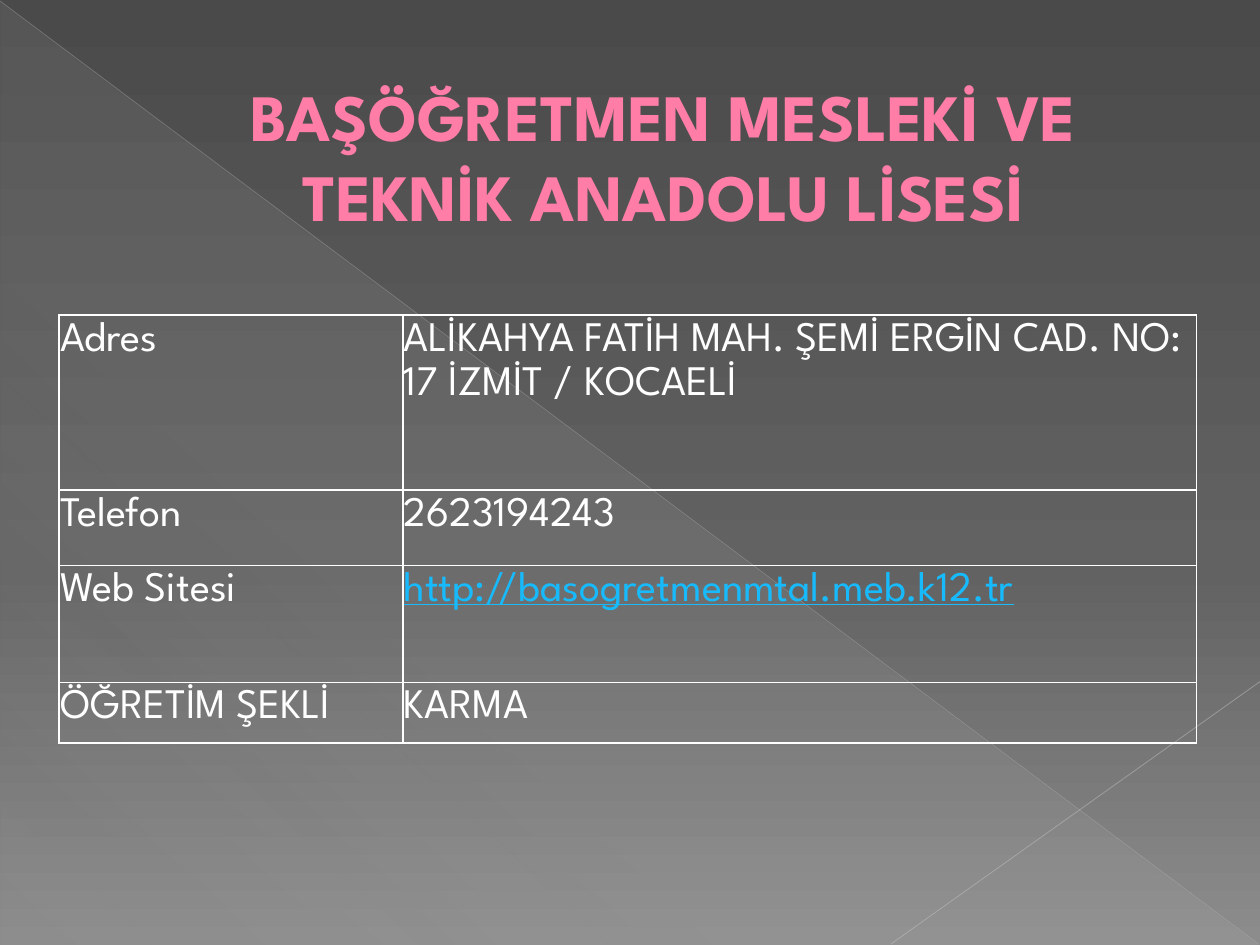
from lxml.etree import SubElement
from pptx import Presentation
from pptx.dml.color import RGBColor
from pptx.enum.shapes import MSO_CONNECTOR as Connector, MSO_SHAPE as Shape
from pptx.enum.text import MSO_ANCHOR as Anchor, PP_ALIGN as Align
from pptx.oxml.ns import qn
from pptx.util import Cm, Pt

FONT = "League Spartan"
COLORS = {
    "top": "4A4A4A", "middle": "626262", "bottom": "8C8C8C",
    "veil": "D2D2D2", "diagonal": "BFBFBF", "corner": "C6C6C6",
    "title": "FF7DA7", "title outline": "B12761",
    "text": "FFFFFF", "web": "17BBFD",
}


class SlideBuilder:
    def __init__(self, slide, font, colors):
        self.slide, self.font, self.colors = slide, font, colors

    def rgb(self, color):
        return RGBColor.from_string(self.colors[color])

    def add_color(self, parent, color, opacity=100):
        element = SubElement(parent, qn("a:srgbClr"), val=self.colors[color])
        if opacity < 100:
            SubElement(element, qn("a:alpha"), val=str(opacity * 1000))

    def set_gradient(self, owner, fill, stops, angle):
        fill.gradient()
        gradient = owner.element.xpath(".//a:gradFill")[0]
        for child in list(gradient):
            gradient.remove(child)
        stop_list = SubElement(gradient, qn("a:gsLst"))
        for position, color, opacity in stops:
            stop = SubElement(stop_list, qn("a:gs"), pos=str(position * 1000))
            self.add_color(stop, color, opacity)
        SubElement(gradient, qn("a:lin"), ang=str(angle * 60000), scaled="0")

    def background(self, stops, angle):
        self.set_gradient(self.slide, self.slide.background.fill, stops, angle)

    def triangle(self, left, top, width, height, stops, angle):
        shape = self.slide.shapes.add_shape(
            Shape.RIGHT_TRIANGLE, Cm(left), Cm(top), Cm(width), Cm(height))
        shape.shadow.inherit = False
        shape.line.fill.background()
        self.set_gradient(shape, shape.fill, stops, angle)

    def line(self, start, end, color, width, opacity):
        connector = self.slide.shapes.add_connector(
            Connector.STRAIGHT, *map(Cm, start + end))
        connector.line.width = Pt(width)
        connector.line.color.rgb = self.rgb(color)
        color_element = connector.element.xpath(".//a:ln//a:srgbClr")[0]
        SubElement(color_element, qn("a:alpha"), val=str(opacity * 1000))
        properties = connector.element.xpath("./p:spPr")[0]
        SubElement(properties, qn("a:effectLst"))

    def style(self, paragraph, size, color, bold=False, underline=False):
        font = paragraph.font
        font.name, font.size = self.font, Pt(size)
        font.bold, font.underline = bold, underline
        font.color.rgb = self.rgb(color)

    def title(self, text, left, top, width, height, indent):
        box = self.slide.shapes.add_textbox(
            Cm(left), Cm(top), Cm(width), Cm(height))
        frame = box.text_frame
        frame.word_wrap = True
        frame.vertical_anchor = Anchor.TOP
        frame.margin_top = 0
        frame.margin_left = Cm(indent)
        paragraph = frame.paragraphs[0]
        paragraph.alignment = Align.CENTER
        paragraph.line_spacing = Pt(45.7)
        run = paragraph.add_run()
        run.text = text
        self.style(run, 37.8, "title", bold=True)
        # Thin outline around the letters, placed ahead of their fill
        properties = run.font.fill and box.element.xpath(".//a:rPr")[0]
        outline = SubElement(properties, qn("a:ln"), w=str(Pt(0.5)))
        self.add_color(SubElement(outline, qn("a:solidFill")), "title outline")
        properties.insert(0, outline)

    def cell(self, cell, text, color, space_after):
        cell.margin_left = cell.margin_right = Cm(0.02)
        cell.margin_top = cell.margin_bottom = Cm(0.02)
        cell.text = text
        paragraph = cell.text_frame.paragraphs[0]
        paragraph.line_spacing = 1.15
        paragraph.space_after = Pt(space_after)
        self.style(paragraph, 24, color, underline=color == "web")
        properties = cell.fill and cell._tc.get_or_add_tcPr()
        for side in ("a:lnL", "a:lnR", "a:lnT", "a:lnB"):
            border = SubElement(properties, qn(side), w=str(Pt(1)))
            self.add_color(SubElement(border, qn("a:solidFill")), "text")
        cell.fill.background()

    def table(self, left, top, widths, rows):
        heights = [row[0] for row in rows]
        table = self.slide.shapes.add_table(
            len(rows), len(widths), Cm(left), Cm(top),
            Cm(sum(widths)), Cm(sum(heights))).table
        table.first_row = table.horz_banding = False
        for column, width in zip(table.columns, widths):
            column.width = Cm(width)
        for index, (height, label, value, color, space_after) in enumerate(rows):
            table.rows[index].height = Cm(height)
            self.cell(table.cell(index, 0), label, "text", space_after)
            self.cell(table.cell(index, 1), value, color, space_after)


def main():
    presentation = Presentation()
    presentation.slide_width, presentation.slide_height = Cm(25.4), Cm(19.05)
    slide = presentation.slides.add_slide(presentation.slide_layouts[6])
    builder = SlideBuilder(slide, FONT, COLORS)

    # Backdrop
    builder.background(
        [(0, "top", 100), (60, "middle", 100), (100, "bottom", 100)], 90)
    builder.triangle(0.02, 0.04, 25.36, 19.01,
                     [(0, "veil", 10), (70, "veil", 8), (100, "veil", 1)], 133)
    builder.line((0, 0.02), (25.37, 19.03), "diagonal", 0.39, 35)
    builder.line((25.4, 13.74), (17.96, 19.03), "corner", 0.47, 45)

    # School name
    builder.title("BAŞÖĞRETMEN MESLEKİ VE TEKNİK ANADOLU LİSESİ",
                  1.27, 1.5, 22.86, 4.62, indent=1.6)

    # Contact details: height, label, value, value colour, space after
    builder.table(1.19, 6.35, (6.93, 16), [
        (3.53, "Adres",
         "ALİKAHYA FATİH MAH. ŞEMİ ERGİN CAD. NO: 17 İZMİT / KOCAELİ",
         "text", 10),
        (1.52, "Telefon", "2623194243", "text", 10),
        (2.36, "Web Sitesi", "http://basogretmenmtal.meb.k12.tr", "web", 10),
        (1.22, "ÖĞRETİM ŞEKLİ", "KARMA", "text", 0),
    ])

    presentation.save("out.pptx")


if __name__ == "__main__":
    main()
